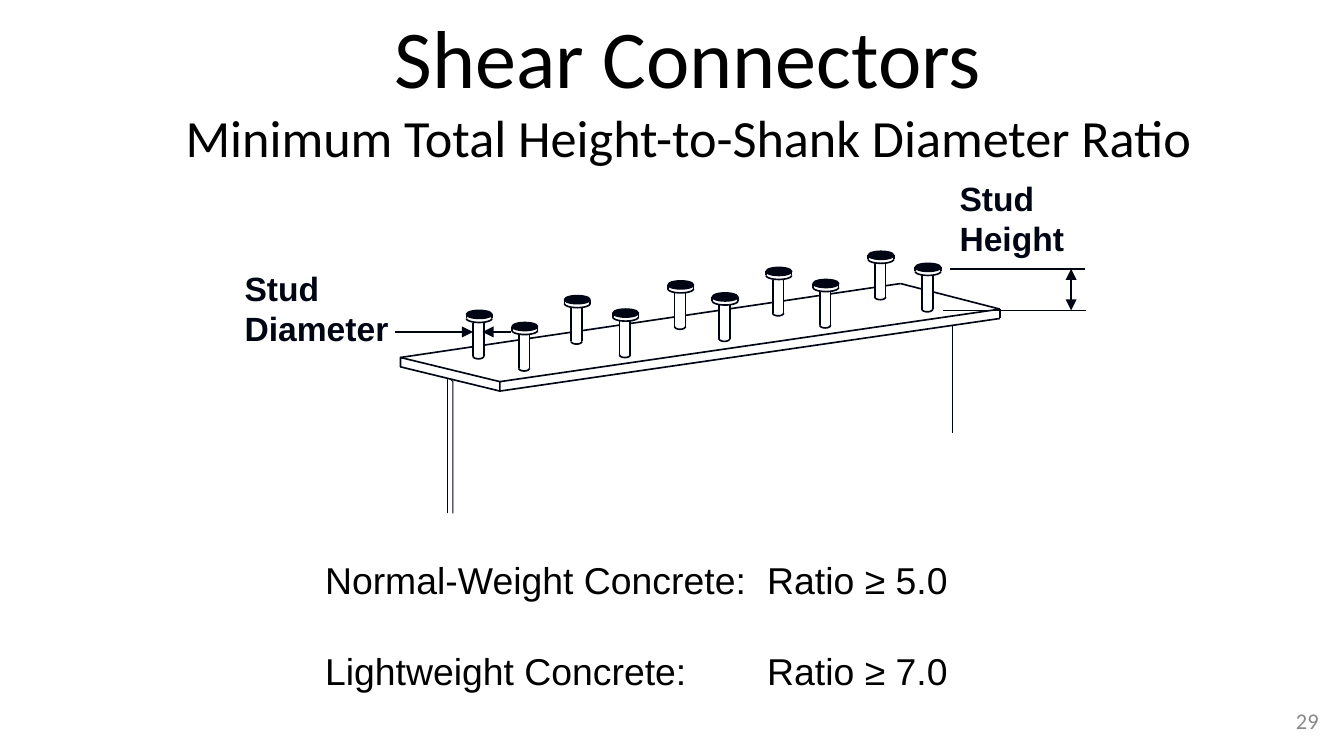
from dataclasses import dataclass
from itertools import pairwise
from math import cos, pi, sin

from lxml.etree import SubElement
from pptx import Presentation
from pptx.dml.color import RGBColor
from pptx.enum.shapes import MSO_CONNECTOR, MSO_SHAPE
from pptx.enum.text import MSO_ANCHOR, MSO_AUTO_SIZE, PP_ALIGN
from pptx.oxml.ns import qn
from pptx.util import Inches, Pt


@dataclass(frozen=True)
class Theme:
    """Colours, fonts, type sizes and line widths."""

    ink: RGBColor = RGBColor(0x00, 0x05, 0x14)
    black: RGBColor = RGBColor(0, 0, 0)
    grey: RGBColor = RGBColor(0x89, 0x89, 0x89)
    heading_font: str = "Calibri"
    body_font: str = "Arial"
    title: int = 44
    subtitle: int = 28
    body: int = 20
    label: int = 18
    number: int = 12
    thin: float = 0.5
    edge: float = 0.88
    dimension: float = 1


class SlideBuilder:
    """Holds the theme, the page and the group for the drawing."""

    def __init__(self, page, theme):
        self.page = page
        self.theme = theme
        self.drawing = page.shapes.add_group_shape().shapes

    def span(self, para, text, size, font, color, bold=False):
        """Add one styled run to a paragraph."""
        span = para.add_run()
        span.text = text
        span.font.size = Pt(size)
        span.font.name = font
        span.font.bold = bold
        span.font.color.rgb = color

    def title(self, text, subtitle):
        """Fill the title placeholder with a title and a smaller second line."""
        theme = self.theme
        box = self.page.shapes.title
        box.left, box.top, box.width, box.height = map(Inches, (0.62, 0, 9, 0.94))
        frame = box.text_frame
        frame.auto_size = MSO_AUTO_SIZE.NONE
        frame.vertical_anchor = MSO_ANCHOR.TOP
        frame.margin_top = Inches(0.05)
        para = frame.paragraphs[0]
        para.alignment = PP_ALIGN.CENTER
        self.span(para, text, theme.title, theme.heading_font, theme.black)
        para.add_line_break()
        self.span(para, subtitle, theme.subtitle, theme.heading_font, theme.black)

    def text_box(self, shapes, left, top, width, height):
        """Add an empty wrapping text box and return its frame."""
        box = shapes.add_textbox(*map(Inches, (left, top, width, height)))
        box.text_frame.word_wrap = True
        return box.text_frame

    def label(self, text, left, top, width):
        """Add a bold label without insets to the drawing."""
        theme = self.theme
        frame = self.text_box(self.drawing, left, top, width, 0.61)
        frame.margin_left = frame.margin_right = 0
        frame.margin_top = frame.margin_bottom = 0
        self.span(frame.paragraphs[0], text, theme.label, theme.body_font, theme.ink, True)

    def ratios(self, rows):
        """Add name and ratio rows aligned on a tab stop."""
        theme = self.theme
        frame = self.text_box(self.page.shapes, 2.32, 4.1, 6.08, 1.11)
        for index, row in enumerate(rows):
            para = frame.add_paragraph() if index else frame.paragraphs[0]
            if index:
                para.space_before = Pt(24.5)
            tabs = SubElement(para._p.get_or_add_pPr(), qn("a:tabLst"))
            SubElement(tabs, qn("a:tab"), pos=str(Inches(3.29)), algn="l")
            self.span(para, "\t".join(row), theme.body, theme.body_font, theme.black)

    def page_number(self, text):
        """Add the page number at the lower right."""
        theme = self.theme
        frame = self.text_box(self.page.shapes, 7.58, 5.21, 2.33, 0.3)
        frame.vertical_anchor = MSO_ANCHOR.MIDDLE
        para = frame.paragraphs[0]
        para.alignment = PP_ALIGN.RIGHT
        self.span(para, text, theme.number, theme.heading_font, theme.grey)

    def line(self, start, end, width, arrows=()):
        """Draw a straight line with arrowheads at the named ends."""
        connector = self.drawing.add_connector(
            MSO_CONNECTOR.STRAIGHT, *map(Inches, (*start, *end))
        )
        connector.line.color.rgb = self.theme.ink
        connector.line.width = Pt(width)
        properties = connector._element.spPr
        for arrow in arrows:
            SubElement(properties.find(qn("a:ln")), qn(f"a:{arrow}"), type="triangle")
        SubElement(properties, qn("a:effectLst"))

    def outline(self, points, width, close=False):
        """Draw an unfilled outline through the points."""
        corners = [tuple(map(Inches, point)) for point in points]
        builder = self.drawing.build_freeform(*corners[0], scale=1.0)
        builder.add_line_segments(corners[1:], close=close)
        shape = builder.convert_to_shape()
        shape.shadow.inherit = False
        shape.fill.background()
        shape.line.color.rgb = self.theme.ink
        shape.line.width = Pt(width)

    def bowl(self, left, top, width, depth):
        """Draw the lower half of an ellipse."""
        angles = [pi * step / 16 for step in range(17)]
        points = [
            (left + width / 2 * (1 - cos(angle)), top + depth * sin(angle))
            for angle in angles
        ]
        self.outline(points, self.theme.edge)

    def stud(self, left, top):
        """Draw one headed stud from the top left of its head."""
        theme = self.theme
        head = self.drawing.add_shape(
            MSO_SHAPE.OVAL, *map(Inches, (left, top, 0.19, 0.06))
        )
        head.shadow.inherit = False
        head.fill.solid()
        head.fill.fore_color.rgb = theme.ink
        head.line.color.rgb = theme.ink
        head.line.width = Pt(theme.edge)
        self.bowl(left, top + 0.06, 0.19, 0.03)
        self.bowl(left + 0.05, top + 0.34, 0.08, 0.02)
        for x, upper, lower in ((0, 0.03, 0.06), (0.19, 0.03, 0.06),
                                (0.05, 0.09, 0.34), (0.13, 0.09, 0.34)):
            self.line((left + x, top + upper), (left + x, top + lower), theme.edge)

    def broken_edge(self, start, end, stud_lefts):
        """Draw a plate edge that stops behind each stud shank."""
        slope = (end[1] - start[1]) / (end[0] - start[0])
        stops = [start[0]]
        for left in stud_lefts:
            stops += [left + 0.05, left + 0.13]
        stops.append(end[0])
        for first, last in list(pairwise(stops))[::2]:
            ends = [(x, start[1] + slope * (x - start[0])) for x in (first, last)]
            self.line(*ends, self.theme.edge)


def draw_beam(builder):
    """Draw the flange plate, the web and the studs."""
    theme = builder.theme
    studs = [(3.47, 2.31), (3.81, 2.4), (4.2, 2.2), (4.56, 2.3), (4.97, 2.09),
             (5.3, 2.18), (5.7, 1.99), (6.05, 2.08), (6.46, 1.87), (6.81, 1.96)]
    near_top, near_bottom = (3.72, 2.84), (3.72, 2.91)
    far_top, far_bottom = (7.44, 2.3), (7.44, 2.37)
    left_top, left_bottom, back = (2.98, 2.66), (2.98, 2.73), (6.7, 2.11)
    for start, end in ((near_top, far_top), (near_bottom, far_bottom),
                       (far_top, far_bottom)):
        builder.line(start, end, theme.edge)
    builder.outline([left_bottom, left_top, near_top, near_bottom], theme.edge, close=True)
    lefts = [left for left, top in studs]
    builder.broken_edge(left_top, back, lefts[:-1])
    builder.broken_edge(back, far_top, lefts[-1:])
    for left, top in studs:
        builder.stud(left, top)
    builder.line((7.09, 3.22), (7.09, 2.42), theme.thin)
    builder.line((3.33, 3.82), (3.33, 2.82), theme.thin)
    builder.outline([(3.35, 2.82), (3.37, 2.84), (3.37, 3.82)], theme.thin)


def draw_dimensions(builder):
    """Draw the height and diameter dimensions with their labels."""
    width = builder.theme.dimension
    builder.line((7.07, 2), (8.07, 2), width)
    builder.line((7.02, 2.31), (8.08, 2.31), width)
    builder.line((7.97, 2), (7.97, 2.31), width, ("headEnd", "tailEnd"))
    builder.line((3.8, 2.47), (3.59, 2.47), width, ("tailEnd",))
    builder.line((2.94, 2.47), (3.52, 2.47), width, ("tailEnd",))
    builder.label("Stud Height", 7.14, 1.32, 1.04)
    builder.label("Stud Diameter", 1.82, 1.99, 1.31)


def main():
    """Build the slide and save it."""
    deck = Presentation()
    deck.slide_width = Inches(10)
    deck.slide_height = deck.slide_width * 9 // 16
    builder = SlideBuilder(deck.slides.add_slide(deck.slide_layouts[5]), Theme())
    builder.title("Shear Connectors", "Minimum Total Height-to-Shank Diameter Ratio")
    builder.page_number("29")
    draw_dimensions(builder)
    draw_beam(builder)
    builder.ratios([("Normal-Weight Concrete:", "Ratio ≥ 5.0"),
                    ("Lightweight Concrete:", "Ratio ≥ 7.0")])
    deck.save("out.pptx")


if __name__ == "__main__":
    main()
